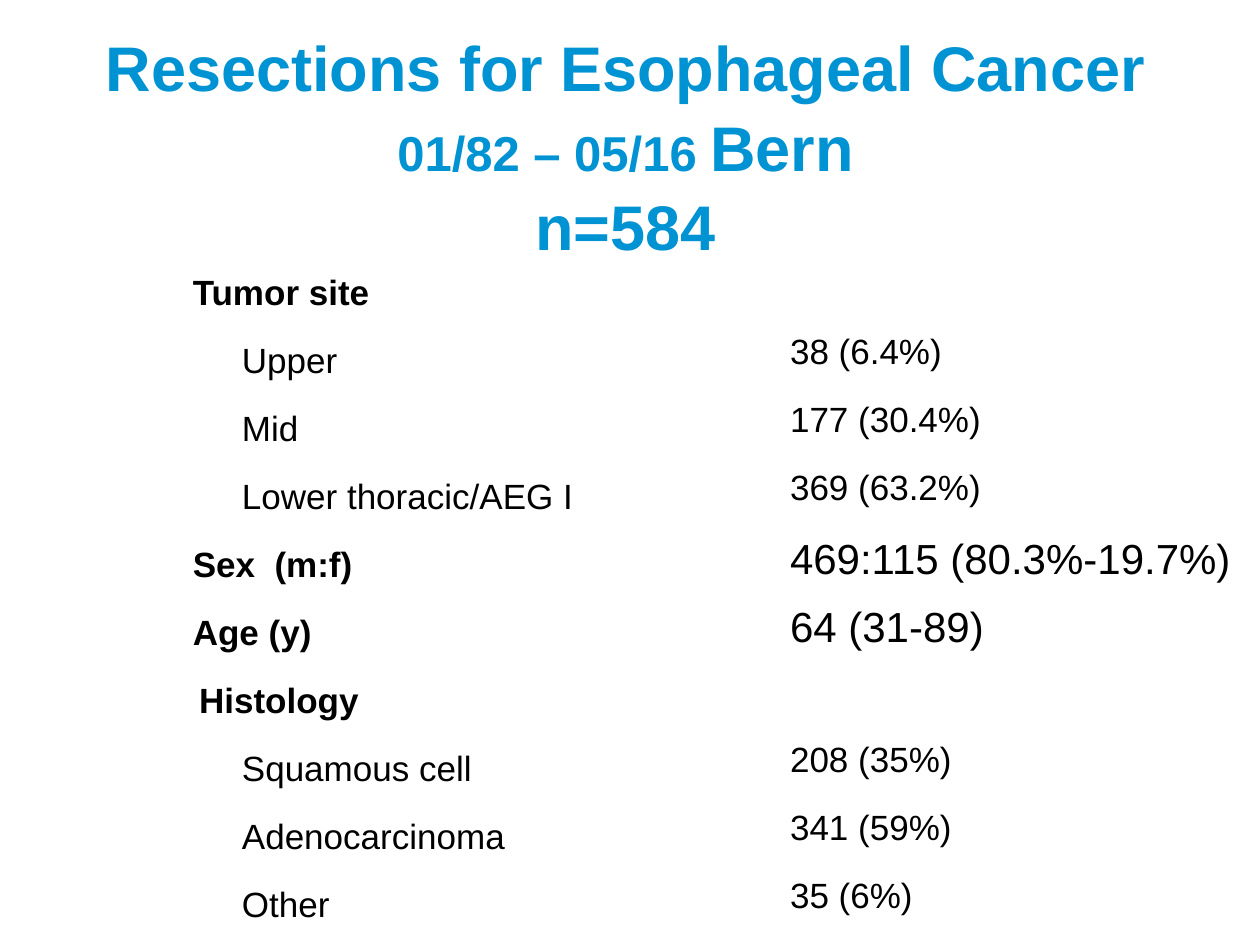
from dataclasses import dataclass

from pptx import Presentation
from pptx.dml.color import RGBColor
from pptx.enum.text import MSO_ANCHOR, MSO_AUTO_SIZE, PP_ALIGN
from pptx.util import Inches, Pt

TOP, MIDDLE = MSO_ANCHOR.TOP, MSO_ANCHOR.MIDDLE
CENTER = PP_ALIGN.CENTER
NO_FIT = MSO_AUTO_SIZE.NONE
TITLE_ONLY = 5


@dataclass(frozen=True)
class Theme:
    font: str = "Arial"
    title_color: RGBColor = RGBColor(0x00, 0x93, 0xD3)
    text_color: RGBColor = RGBColor(0x00, 0x00, 0x00)
    title_size: int = 36
    period_size: int = 28
    body_size: int = 20
    large_size: int = 24


THEME = Theme()
HEADING_INDENT = 0.19
HISTOLOGY_INDENT = 0.24
ITEM_INDENT = 0.58

ROWS = [
    ("Tumor site", HEADING_INDENT, ""),
    ("Upper", ITEM_INDENT, "38 (6.4%)"),
    ("Mid", ITEM_INDENT, "177 (30.4%)"),
    ("Lower thoracic/AEG I", ITEM_INDENT, "369 (63.2%)"),
    ("Sex  (m:f)", HEADING_INDENT, "469:115 (80.3%-19.7%)"),
    ("Age (y)", HEADING_INDENT, "64 (31-89)"),
    ("Histology", HISTOLOGY_INDENT, ""),
    ("Squamous cell", ITEM_INDENT, "208 (35%)"),
    ("Adenocarcinoma", ITEM_INDENT, "341 (59%)"),
    ("Other", ITEM_INDENT, "35 (6%)"),
]


def add_text(para, text, size=THEME.body_size, color=THEME.text_color, bold=False):
    span = para.add_run()
    span.text = text
    span.font.name = THEME.font
    span.font.size = Pt(size)
    span.font.bold = bold
    span.font.color.rgb = color


def place_title(page, left, top, width, height):
    title = page.shapes.title
    title.left, title.top, title.width, title.height = left, top, width, height
    frame = title.text_frame
    frame.word_wrap = True
    frame.auto_size = NO_FIT
    frame.vertical_anchor = TOP
    frame.margin_top = Inches(0.07)
    para = frame.paragraphs[0]
    para.alignment = CENTER
    para.line_spacing = 1.05
    style = {"color": THEME.title_color, "bold": True}
    add_text(para, "Resections for Esophageal Cancer ", size=THEME.title_size, **style)
    add_text(para, "01/82 – 05/16 ", size=THEME.period_size, **style)
    add_text(para, "Bern", size=THEME.title_size, **style)
    para.add_line_break()
    add_text(para, "n=584", size=THEME.title_size, **style)


def place_table(page, left, top, width, height):
    table = page.shapes.add_table(len(ROWS), 2, left, top, width, height).table
    table.first_row = False
    table.horz_banding = False
    table.columns[0].width = Inches(4.83)
    table.columns[1].width = width - Inches(4.83)
    for row, (label, indent, value) in enumerate(ROWS):
        heading = indent != ITEM_INDENT
        label_cell, value_cell = table.cell(row, 0), table.cell(row, 1)
        label_cell.fill.background()
        value_cell.fill.background()
        label_cell.vertical_anchor = MIDDLE
        label_cell.margin_left = Inches(indent)
        label_cell.margin_top = label_cell.margin_right = Inches(0.01)
        label_cell.margin_bottom = 0
        add_text(label_cell.text_frame.paragraphs[0], label, bold=heading)
        if value:
            size = THEME.large_size if heading else THEME.body_size
            add_text(value_cell.text_frame.paragraphs[0], value, size=size)


def main():
    deck = Presentation()
    deck.slide_width, deck.slide_height = Inches(10), Inches(7.5)
    page = deck.slides.add_slide(deck.slide_layouts[TITLE_ONLY])
    place_title(page, Inches(0.35), Inches(0.13), Inches(9.23), Inches(1.26))
    place_table(page, Inches(1.34), Inches(2.05), Inches(9.17), Inches(5.4))
    deck.save("out.pptx")


if __name__ == "__main__":
    main()
